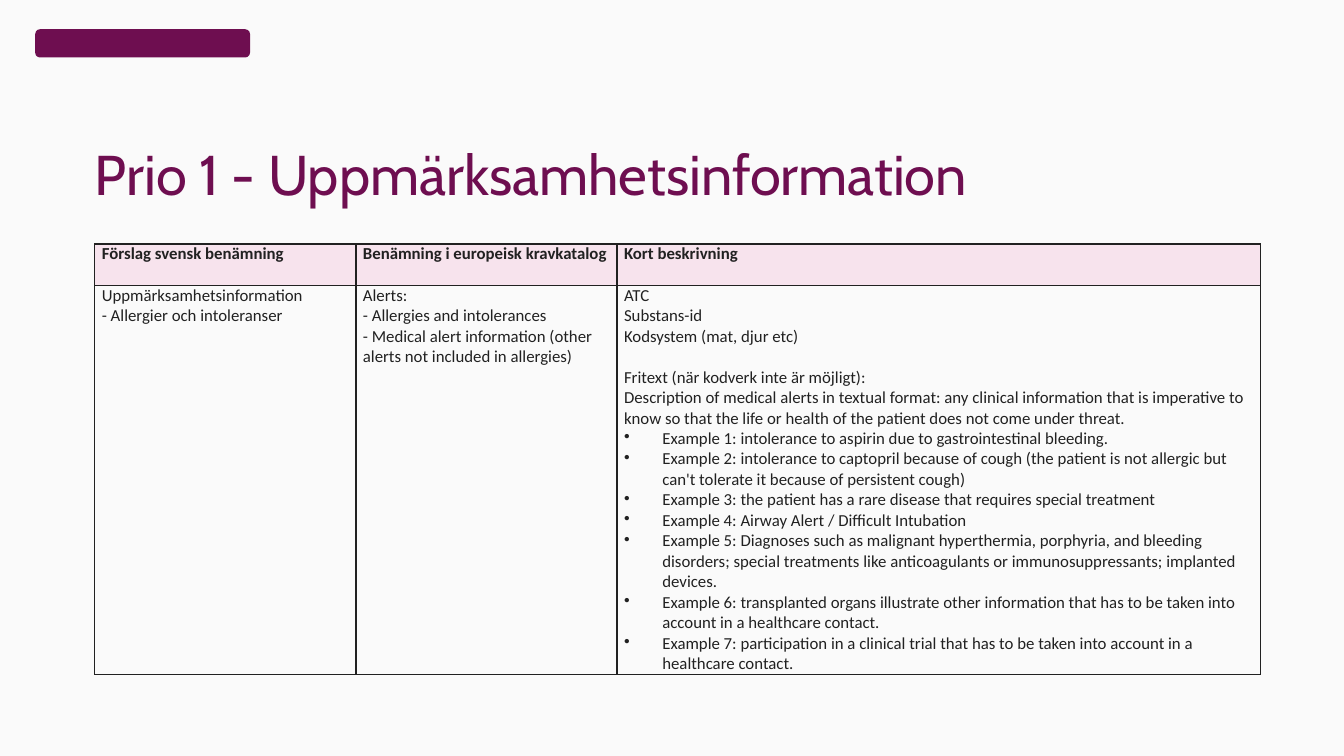
from dataclasses import dataclass

from lxml import etree
from pptx import Presentation
from pptx.dml.color import RGBColor
from pptx.enum.shapes import MSO_SHAPE
from pptx.enum.text import MSO_ANCHOR, MSO_AUTO_SIZE, PP_ALIGN
from pptx.oxml.ns import qn
from pptx.util import Inches, Pt

TITLE_ONLY = 5
LEFT = PP_ALIGN.LEFT
TOP, BOTTOM = MSO_ANCHOR.TOP, MSO_ANCHOR.BOTTOM
NO_AUTOFIT = MSO_AUTO_SIZE.NONE
RECTANGLE = MSO_SHAPE.ROUNDED_RECTANGLE


@dataclass(frozen=True)
class Theme:
    background: str = "FAFAFA"
    plum: str = "6E0E50"
    ink: str = "212121"
    header: str = "F7E3ED"
    title_font: str = "Cabin"
    body_font: str = "Calibri"
    title_size: int = 40
    body_size: int = 12
    border: int = 1


theme = Theme()


def write_text(paragraph, text, *, font=theme.body_font, size=theme.body_size,
               color=theme.ink, bold=False, bullet=False, before=0, spacing=1.0):
    """Fill a paragraph with one formatted run."""
    paragraph.alignment = LEFT
    paragraph.line_spacing = spacing
    paragraph.space_before = Pt(before)
    run = paragraph.add_run()
    run.text = text
    run.font.name = font
    run.font.size = Pt(size)
    run.font.bold = bold
    run.font.color.rgb = RGBColor.from_string(color)
    if bullet:
        properties = paragraph._p.get_or_add_pPr()
        properties.set("marL", str(Inches(0.38)))
        properties.set("indent", str(-Inches(0.38)))
        etree.SubElement(properties, qn("a:buChar"), char="•")


def add_borders(cell):
    """Draw a solid line on all four sides of a cell."""
    properties = cell._tc.get_or_add_tcPr()
    for side in ("a:lnL", "a:lnR", "a:lnT", "a:lnB"):
        line = etree.SubElement(properties, qn(side), w=str(Pt(theme.border)))
        fill = etree.SubElement(line, qn("a:solidFill"))
        etree.SubElement(fill, qn("a:srgbClr"), val=theme.ink)


# Slide
presentation = Presentation()
presentation.slide_width = Inches(13.33)
presentation.slide_height = Inches(7.5)
slide = presentation.slides.add_slide(presentation.slide_layouts[TITLE_ONLY])
slide.background.fill.solid()
slide.background.fill.fore_color.rgb = RGBColor.from_string(theme.background)

# Plain shape in the sender's corner
sender_mark = slide.shapes.add_shape(
    RECTANGLE, Inches(0.35), Inches(0.29), Inches(2.13), Inches(0.28))
sender_mark.shadow.inherit = False
sender_mark.fill.solid()
sender_mark.fill.fore_color.rgb = RGBColor.from_string(theme.plum)
sender_mark.line.fill.background()

# Title
title = slide.shapes.title
title.left, title.top = Inches(0.94), Inches(1.45)
title.width, title.height = Inches(11.46), Inches(0.61)
frame = title.text_frame
frame.margin_left = frame.margin_right = frame.margin_top = frame.margin_bottom = 0
frame.vertical_anchor = BOTTOM
frame.auto_size = NO_AUTOFIT
frame.word_wrap = True
write_text(frame.paragraphs[0], "Prio 1 - Uppmärksamhetsinformation",
           font=theme.title_font, size=theme.title_size, color=theme.plum, spacing=0.9)

# Table content: each cell is a list of (text, format) lines
headings = ["Förslag svensk benämning", "Benämning i europeisk kravkatalog",
            "Kort beskrivning"]
swedish_names = ["Uppmärksamhetsinformation", "- Allergier och intoleranser"]
european_names = [
    "Alerts:",
    "- Allergies and intolerances",
    "- Medical alert information (other alerts not included in allergies)",
]
codes = ["ATC", "Substans-id", "Kodsystem (mat, djur etc)"]
free_text = "Fritext (när kodverk inte är möjligt):"
definition = (
    "Description of medical alerts in textual format: any clinical information that is "
    "imperative to know so that the life or health of the patient does not come under threat.")
examples = [
    "intolerance to aspirin due to gastrointestinal bleeding.",
    "intolerance to captopril because of cough (the patient is not allergic but "
    "can't tolerate it because of persistent cough)",
    "the patient has a rare disease that requires special treatment",
    "Airway Alert / Difficult Intubation",
    "Diagnoses such as malignant hyperthermia, porphyria, and bleeding disorders; special "
    "treatments like anticoagulants or immunosuppressants; implanted devices.",
    "transplanted organs illustrate other information that has to be taken into account "
    "in a healthcare contact.",
    "participation in a clinical trial that has to be taken into account in a "
    "healthcare contact.",
]
description = [(code, {}) for code in codes]
description += [(free_text, {"before": 14.6}), (definition, {})]
description += [(f"Example {number}: {example}", {"bullet": True})
                for number, example in enumerate(examples, start=1)]
rows = [
    [[(heading, {"bold": True})] for heading in headings],
    [[(name, {}) for name in swedish_names],
     [(name, {}) for name in european_names],
     description],
]

# Table
column_widths = [2.59, 2.59, 6.38]
row_heights = [0.41, 3.86]
table = slide.shapes.add_table(
    len(rows), len(headings), Inches(0.94), Inches(2.42),
    Inches(sum(column_widths)), Inches(sum(row_heights))).table
table.first_row = False
table.horz_banding = False
for column, width in zip(table.columns, column_widths):
    column.width = Inches(width)
for row, height in zip(table.rows, row_heights):
    row.height = Inches(height)

for row_index, row_content in enumerate(rows):
    for column_index, lines in enumerate(row_content):
        cell = table.cell(row_index, column_index)
        cell.margin_left = cell.margin_right = Inches(0.07)
        cell.margin_top = cell.margin_bottom = 0
        cell.vertical_anchor = TOP
        add_borders(cell)
        if row_index == 0:
            cell.fill.solid()
            cell.fill.fore_color.rgb = RGBColor.from_string(theme.header)
        else:
            cell.fill.background()
        for line_index, (text, text_format) in enumerate(lines):
            frame = cell.text_frame
            paragraph = frame.add_paragraph() if line_index else frame.paragraphs[0]
            write_text(paragraph, text, **text_format)

presentation.save("out.pptx")
